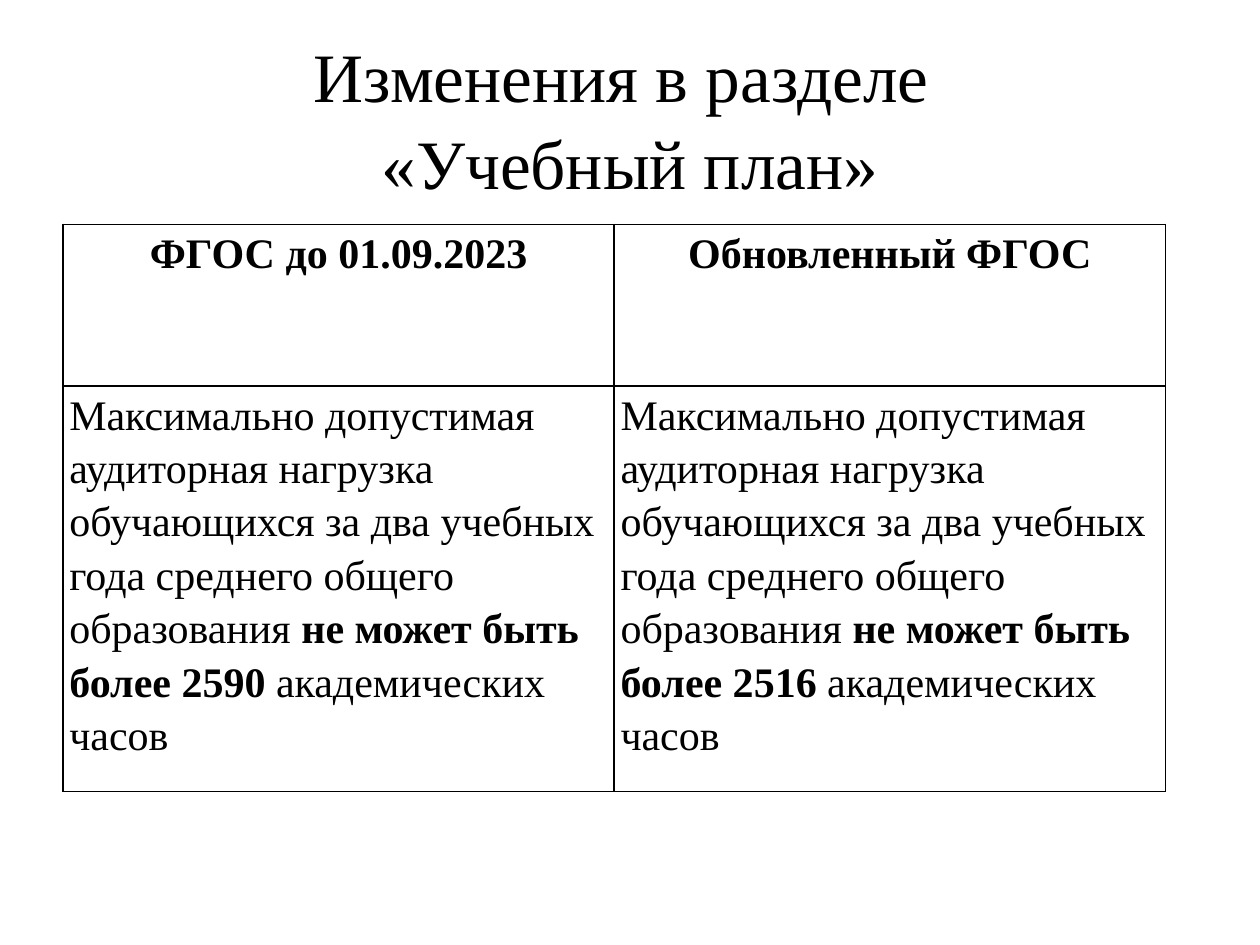
"""Build a slide comparing the curriculum hours before and after the update."""
from pptx import Presentation
from pptx.dml.color import RGBColor
from pptx.enum.text import MSO_ANCHOR, PP_ALIGN
from pptx.oxml import parse_xml
from pptx.oxml.ns import nsdecls
from pptx.util import Pt

FONT, BLACK, WHITE = "Times New Roman", "000000", "FFFFFF"
TITLE = ["Изменения в разделе ", "«Учебный план»"]
LOAD = ("Максимально допустимая аудиторная нагрузка обучающихся "
        "за два учебных года среднего общего образования ")
COLUMNS = [("ФГОС до 01.09.2023", 2590), ("Обновленный ФГОС", 2516)]
COLUMN_WIDTH, ROW_HEIGHTS = 315, [92.3, 231.4]
TABLE_LEFT, TABLE_TOP = 36, 128.2


def color(value):
    return RGBColor.from_string(value)


def add_span(para, text, size, bold=False):
    span = para.add_run()
    span.text = text
    span.font.name, span.font.size, span.font.bold = FONT, Pt(size), bold
    span.font.color.rgb = color(BLACK)


def add_borders(cell):
    properties = cell._tc.get_or_add_tcPr()
    for place, side in enumerate(("lnL", "lnR", "lnT", "lnB")):
        properties.insert(place, parse_xml(
            f'<a:{side} {nsdecls("a")} w="{Pt(1)}"><a:solidFill>'
            f'<a:srgbClr val="{BLACK}"/></a:solidFill></a:{side}>'))


def fill_cell(cell, spans, align):
    cell.margin_left = cell.margin_right = Pt(3.6)
    cell.margin_top = cell.margin_bottom = Pt(0)
    cell.fill.solid()
    cell.fill.fore_color.rgb = color(WHITE)
    add_borders(cell)
    para = cell.text_frame.paragraphs[0]
    para.alignment, para.line_spacing = align, 1.15
    for text, bold in spans:
        add_span(para, text, 24, bold)


def add_title(page):
    frame = page.shapes.add_textbox(Pt(36), Pt(21.6), Pt(648), Pt(90)).text_frame
    frame.word_wrap, frame.vertical_anchor = True, MSO_ANCHOR.MIDDLE
    para = frame.paragraphs[0]
    para.alignment, para.line_spacing = PP_ALIGN.CENTER, 1.04
    first, second = TITLE
    add_span(para, first, 39.6)
    para.add_line_break()
    add_span(para, second, 39.6)


def add_comparison(page):
    table = page.shapes.add_table(
        len(ROW_HEIGHTS), len(COLUMNS), Pt(TABLE_LEFT), Pt(TABLE_TOP),
        Pt(COLUMN_WIDTH * len(COLUMNS)), Pt(sum(ROW_HEIGHTS))).table
    for row, height in zip(table.rows, ROW_HEIGHTS):
        row.height = Pt(height)
    for index, (heading, hours) in enumerate(COLUMNS):
        table.columns[index].width = Pt(COLUMN_WIDTH)
        fill_cell(table.cell(0, index), [(heading, True)], PP_ALIGN.CENTER)
        body = [(LOAD, False), (f"не может быть более {hours}", True),
                (" академических часов", False)]
        fill_cell(table.cell(1, index), body, PP_ALIGN.LEFT)


def main():
    deck = Presentation()
    deck.slide_width, deck.slide_height = Pt(720), Pt(540)
    page = deck.slides.add_slide(deck.slide_layouts[6])
    add_title(page)
    add_comparison(page)
    deck.save("out.pptx")


if __name__ == "__main__":
    main()
